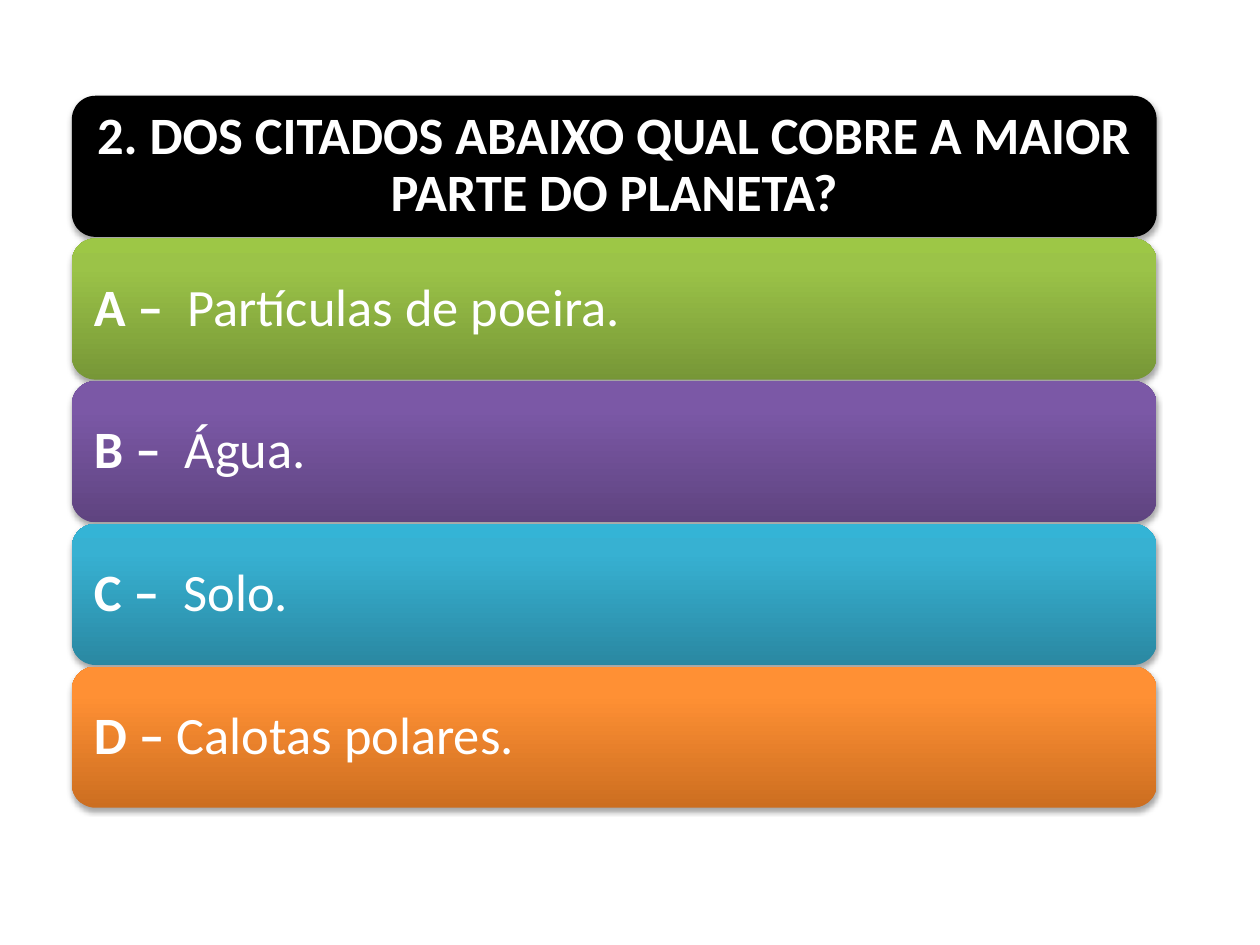
from copy import deepcopy

from lxml import etree
from pptx import Presentation
from pptx.dml.color import RGBColor
from pptx.enum.shapes import MSO_SHAPE
from pptx.enum.text import MSO_ANCHOR, PP_ALIGN
from pptx.oxml.ns import qn
from pptx.util import Inches, Pt

ROUNDED = MSO_SHAPE.ROUNDED_RECTANGLE
MIDDLE = MSO_ANCHOR.MIDDLE
LEFT, CENTER = PP_ALIGN.LEFT, PP_ALIGN.CENTER

COLORS = {
    "text": "FFFFFF",
    "question": "000000",
    "shadow": "000000",
    "green": ("779737", "9BC348", "9DC746"),
    "purple": ("5F4480", "7B58A6", "7C57A8"),
    "blue": ("2A88A2", "37B1D2", "34B4D6"),
    "orange": ("CC6E20", "FF9034", "FF9136"),
}
STOP_POSITIONS = (0, 0.8, 1)
FONT = "Calibri"
BAR_HEIGHT = 1.12
INSET = 0.12

QUESTION = "2. DOS CITADOS ABAIXO QUAL COBRE A MAIOR PARTE DO PLANETA?"
ANSWERS = [
    ("A – ", " Partículas de poeira.", "green"),
    ("B – ", " Água.", "purple"),
    ("C – ", " Solo.", "blue"),
    ("D – ", "Calotas polares.", "orange"),
]


def add_shadow(bar):
    """Give a bar a soft shadow that falls straight down."""
    bar.shadow.inherit = False
    effects = bar._element.spPr.find(qn("a:effectLst"))
    shadow = etree.SubElement(
        effects, qn("a:outerShdw"), blurRad=str(Pt(3.1)), dist=str(Pt(1.8)),
        dir="5400000", rotWithShape="0")
    color = etree.SubElement(shadow, qn("a:srgbClr"), val=COLORS["shadow"])
    etree.SubElement(color, qn("a:alpha"), val="35000")


def fill_gradient(bar, shades):
    """Fill a bar with three shades running from bottom to top."""
    bar.fill.gradient()
    bar.fill.gradient_angle = 90
    stop_list = bar._element.spPr.find(".//" + qn("a:gsLst"))
    stop_list.append(deepcopy(stop_list[-1]))
    for stop, position, shade in zip(bar.fill.gradient_stops, STOP_POSITIONS, shades):
        stop.position = position
        stop.color.rgb = RGBColor.from_string(shade)


def add_bar(slide, left, top, width, height, parts, align):
    """Add a rounded bar with text given as (wording, bold) parts."""
    bar = slide.shapes.add_shape(
        ROUNDED, Inches(left), Inches(top), Inches(width), Inches(height))
    bar.line.fill.background()
    add_shadow(bar)
    frame = bar.text_frame
    frame.word_wrap = True
    frame.vertical_anchor = MIDDLE
    frame.margin_left = frame.margin_right = Inches(INSET)
    frame.margin_top = frame.margin_bottom = Inches(INSET)
    paragraph = frame.paragraphs[0]
    paragraph.alignment = align
    paragraph.line_spacing = 0.9
    for wording, bold in parts:
        run = paragraph.add_run()
        run.text = wording
        run.font.name = FONT
        run.font.size = Pt(30)
        run.font.bold = bold
        run.font.color.rgb = RGBColor.from_string(COLORS["text"])
    return bar


def add_quiz(slide, left, top, width, height):
    """Stack the question and its answers evenly within the given box."""
    pitch = (height - BAR_HEIGHT) / len(ANSWERS)
    question = add_bar(
        slide, left, top, width, BAR_HEIGHT, [(QUESTION, True)], CENTER)
    question.fill.solid()
    question.fill.fore_color.rgb = RGBColor.from_string(COLORS["question"])
    for row, (letter, answer, color) in enumerate(ANSWERS, start=1):
        bar = add_bar(slide, left, top + row * pitch, width, BAR_HEIGHT,
                      [(letter, True), (answer, False)], LEFT)
        fill_gradient(bar, COLORS[color])


def main():
    """Build the quiz slide and save it."""
    presentation = Presentation()
    presentation.slide_width = Inches(10)
    presentation.slide_height = Inches(7.5)
    slide = presentation.slides.add_slide(presentation.slide_layouts[6])
    add_quiz(slide, left=0.57, top=0.76, width=8.61, height=5.65)
    presentation.save("out.pptx")


if __name__ == "__main__":
    main()
